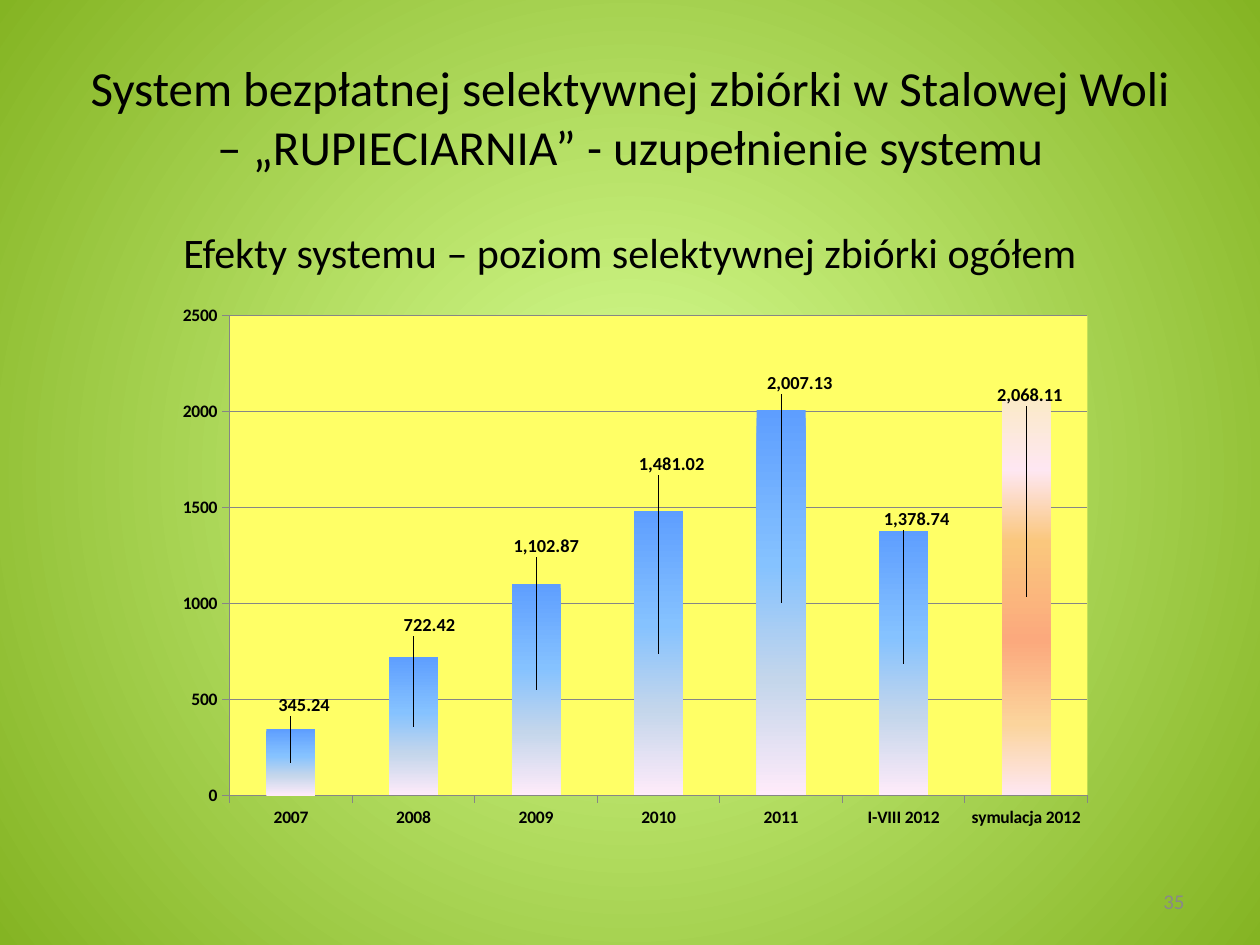
"""Build a slide on selective waste collection with a stacked column chart."""
from typing import NamedTuple

from pptx import Presentation
from pptx.chart.data import CategoryChartData
from pptx.dml.color import RGBColor
from pptx.enum.chart import XL_CHART_TYPE, XL_LABEL_POSITION, XL_TICK_MARK
from pptx.enum.text import MSO_ANCHOR, PP_ALIGN
from pptx.oxml import parse_xml
from pptx.oxml.ns import nsdecls, qn
from pptx.util import Inches, Pt

FONT = "Calibri"
NUMBER_FORMAT = "#,##0.00"
SLIDE_WIDTH, SLIDE_HEIGHT = Inches(10), Inches(7.5)
COLORS = {"text": "000000", "number": "898989", "plot": "FFFF66", "axis": "868686"}
BACKGROUND = {0: "D9FF95", 100: "84B423"}
COLLECTED = {0: "5E9EFF", 40: "85C2FF", 70: "C4D6EB", 100: "FFEBFA"}
SIMULATED = {0: "FBEAC7", 18: "FEE7F2", 36: "FAC77D",
             61: "FBA97D", 82: "FBD49C", 100: "FEE7F2"}
LINEAR = '<a:lin ang="5400000" scaled="0"/>'
RADIAL = ('<a:path path="circle"><a:fillToRect l="50000" t="50000" '
          'r="50000" b="50000"/></a:path>')


class Area(NamedTuple):
    """Rectangle given in shares of the slide's size."""
    left: float
    top: float
    width: float
    height: float

    def box(self) -> tuple:
        """Return left, top, width and height as lengths."""
        return (int(self.left * SLIDE_WIDTH), int(self.top * SLIDE_HEIGHT),
                int(self.width * SLIDE_WIDTH), int(self.height * SLIDE_HEIGHT))


class Caption(NamedTuple):
    """Text with its place and format."""
    text: str
    area: Area
    size: float
    color: str = "text"
    align: PP_ALIGN = PP_ALIGN.CENTER
    anchor: MSO_ANCHOR = MSO_ANCHOR.MIDDLE


class Year(NamedTuple):
    """Collected amount and its label's shift in shares of the chart."""
    name: str
    amount: float
    shift_x: float
    shift_y: float


TITLE = Caption("System bezpłatnej selektywnej zbiórki w Stalowej Woli "
                "– „RUPIECIARNIA” - uzupełnienie systemu",
                Area(0.05, 0.04, 0.9, 0.167), 28)
CAPTIONS = [
    Caption("Efekty systemu – poziom selektywnej zbiórki ogółem",
            Area(0.05, 0.233, 0.9, 0.07), 24, anchor=MSO_ANCHOR.TOP),
    Caption("35", Area(0.717, 0.927, 0.233, 0.053), 12, "number", PP_ALIGN.RIGHT),
]
CHART_AREA = Area(0.13, 0.311, 0.748, 0.577)
PLOT_AREA = Area(0.07, 0.04, 0.91, 0.88)
YEARS = [
    Year("2007", 345.24, 0.014, -0.105),
    Year("2008", 722.42, 0.017, -0.185),
    Year("2009", 1102.87, 0.011, -0.263),
    Year("2010", 1481.02, 0.014, -0.346),
    Year("2011", 2007.13, 0.02, -0.402),
    Year("I-VIII 2012", 1378.74, 0.014, -0.264),
    Year("symulacja 2012", 2068.11, 0.004, -0.37),
]


def color(name: str) -> RGBColor:
    """Look up a named colour."""
    return RGBColor.from_string(COLORS[name])


def style_font(font, size: float, name: str = "text", bold: bool = False) -> None:
    """Set face, size, weight and colour."""
    font.name, font.size, font.bold = FONT, Pt(size), bold
    font.color.rgb = color(name)


def write_caption(shape, caption: Caption) -> None:
    """Place a shape and write its caption."""
    shape.left, shape.top, shape.width, shape.height = caption.area.box()
    frame = shape.text_frame
    frame.word_wrap, frame.vertical_anchor = True, caption.anchor
    paragraph = frame.paragraphs[0]
    paragraph.alignment = caption.align
    run = paragraph.add_run()
    run.text = caption.text
    style_font(run.font, caption.size, caption.color)


def set_gradient(properties, stops: dict, direction: str) -> None:
    """Swap the solid fill of a properties element for a gradient."""
    listed = "".join(f'<a:gs pos="{share * 1000}"><a:srgbClr val="{value}"/></a:gs>'
                     for share, value in stops.items())
    gradient = parse_xml(f'<a:gradFill {nsdecls("a")} rotWithShape="1">'
                         f'<a:gsLst>{listed}</a:gsLst>{direction}</a:gradFill>')
    properties.replace(properties.find(qn("a:solidFill")), gradient)


def manual_layout(**settings):
    """Make a chart layout element."""
    listed = "".join(f'<c:{key} val="{value}"/>' for key, value in settings.items())
    return parse_xml(f'<c:layout {nsdecls("c")}><c:manualLayout>{listed}'
                     '</c:manualLayout></c:layout>')


def style_axis(axis) -> None:
    """Format an axis with its line, ticks and labels."""
    axis.format.line.color.rgb = color("axis")
    axis.major_tick_mark = XL_TICK_MARK.OUTSIDE
    axis.minor_tick_mark = XL_TICK_MARK.NONE
    style_font(axis.tick_labels.font, 10, bold=True)


def style_plot_area(chart) -> None:
    """Fix the plot's place and fill it."""
    plot_area = chart._chartSpace.chart.plotArea
    for layout in plot_area.findall(qn("c:layout")):
        plot_area.remove(layout)
    plot_area.insert(0, manual_layout(
        layoutTarget="inner", xMode="edge", yMode="edge", x=PLOT_AREA.left,
        y=PLOT_AREA.top, w=PLOT_AREA.width, h=PLOT_AREA.height))
    plot_area.append(parse_xml(
        f'<c:spPr {nsdecls("c", "a")}><a:solidFill><a:srgbClr val="{COLORS["plot"]}"/>'
        '</a:solidFill></c:spPr>'))


def label_years(series) -> None:
    """Show each amount at its shifted place."""
    labels = series.data_labels
    labels.show_value = True
    labels.number_format, labels.number_format_is_linked = NUMBER_FORMAT, False
    labels.position = XL_LABEL_POSITION.CENTER
    style_font(labels.font, 10.5, bold=True)
    for index, year in enumerate(YEARS):
        label = series.points[index].data_label
        style_font(label.font, 10.5, bold=True)
        label.position = XL_LABEL_POSITION.CENTER
    for element, year in zip(series._element.iter(qn("c:dLbl")), YEARS):
        element.insert(1, manual_layout(x=year.shift_x, y=year.shift_y))
        element.insert(2, parse_xml(f'<c:numFmt {nsdecls("c")} '
                                    f'formatCode="{NUMBER_FORMAT}" sourceLinked="0"/>'))


def add_collection_chart(slide) -> None:
    """Draw the yearly amounts as columns."""
    data = CategoryChartData(number_format=NUMBER_FORMAT)
    data.categories = [year.name for year in YEARS]
    data.add_series("Series 1", [year.amount for year in YEARS])
    chart = slide.shapes.add_chart(
        XL_CHART_TYPE.COLUMN_STACKED, *CHART_AREA.box(), data).chart
    chart.has_legend = chart.has_title = False
    style_font(chart.font, 10)
    style_axis(chart.category_axis)
    amounts = chart.value_axis
    style_axis(amounts)
    amounts.minimum_scale, amounts.maximum_scale, amounts.major_unit = 0, 2500, 500
    amounts.tick_labels.number_format = "General"
    amounts.tick_labels.number_format_is_linked = False
    amounts.major_gridlines.format.line.color.rgb = color("axis")
    plot = chart.plots[0]
    plot.gap_width, plot.overlap, plot.vary_by_categories = 150, 100, False
    series = plot.series[0]
    series.format.fill.solid()
    series.format.fill.fore_color.rgb = color("text")
    set_gradient(series._element.find(qn("c:spPr")), COLLECTED, LINEAR)
    simulation = series.points[len(YEARS) - 1].format.fill
    simulation.solid()
    simulation.fore_color.rgb = color("text")
    set_gradient(series._element.find(qn("c:dPt")).find(qn("c:spPr")), SIMULATED, LINEAR)
    label_years(series)
    style_plot_area(chart)


def main() -> None:
    """Build and save the slide."""
    deck = Presentation()
    deck.slide_width, deck.slide_height = SLIDE_WIDTH, SLIDE_HEIGHT
    slide = deck.slides.add_slide(deck.slide_layouts[5])
    slide.background.fill.solid()
    set_gradient(next(slide._element.iter(qn("p:bgPr"))), BACKGROUND, RADIAL)
    write_caption(slide.shapes.title, TITLE)
    for caption in CAPTIONS:
        write_caption(slide.shapes.add_textbox(*caption.area.box()), caption)
    add_collection_chart(slide)
    deck.save("out.pptx")


if __name__ == "__main__":
    main()
